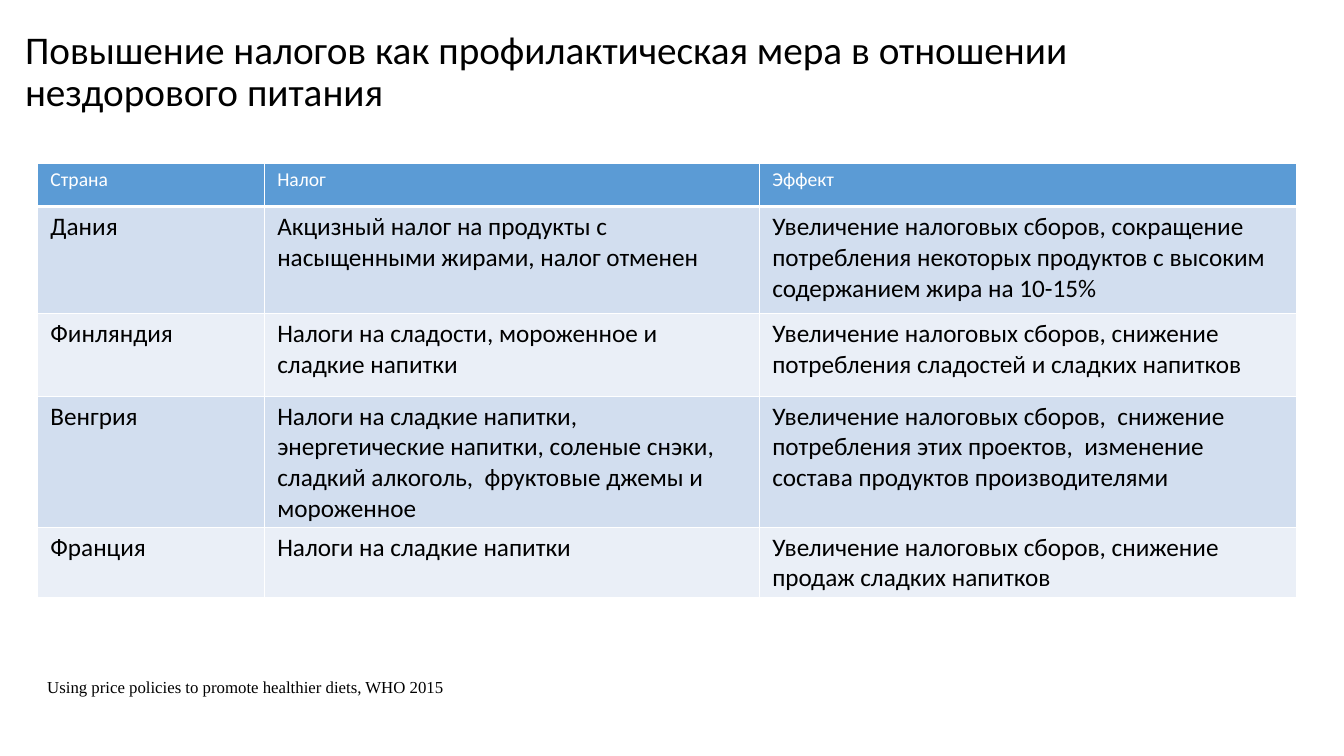
"""Build a slide on food taxes as a preventive measure, with a table by country."""
from lxml import etree
from pptx import Presentation
from pptx.dml.color import RGBColor
from pptx.enum import text
from pptx.oxml import ns
from pptx.util import Inches, Pt

TITLE = "Повышение налогов как профилактическая мера в отношении нездорового питания"
SOURCE = "Using price policies to promote healthier diets, WHO 2015"
TAXES = [
    ("Страна", "Налог", "Эффект"),
    ("Дания", "Акцизный налог на продукты с насыщенными жирами, налог отменен",
     "Увеличение налоговых сборов, сокращение потребления некоторых продуктов "
     "с высоким содержанием жира на 10-15%"),
    ("Финляндия", "Налоги на сладости, мороженное и сладкие напитки",
     "Увеличение налоговых сборов, снижение потребления сладостей и сладких напитков"),
    ("Венгрия",
     "Налоги на сладкие напитки, энергетические напитки, соленые снэки, "
     "сладкий алкоголь,  фруктовые джемы и мороженное",
     "Увеличение налоговых сборов,  снижение потребления этих проектов,  "
     "изменение состава продуктов производителями"),
    ("Франция", "Налоги на сладкие напитки",
     "Увеличение налоговых сборов, снижение продаж сладких напитков"),
]
COLUMN_WIDTHS = (2.25, 4.91, 5.33)
ROW_HEIGHTS = (0.43, 1.06, 0.82, 1.06, 0.58)

BLACK = RGBColor(0, 0, 0)
WHITE = RGBColor(0xFF, 0xFF, 0xFF)
HEADER_BLUE = RGBColor(0x5B, 0x9B, 0xD5)
BANDS = (RGBColor(0xD2, 0xDE, 0xEF), RGBColor(0xEA, 0xEF, 0xF7))


def style(paragraph, size, color, font="Calibri"):
    for run in paragraph.runs:
        run.font.name = font
        run.font.size = Pt(size)
        run.font.bold = False
        run.font.color.rgb = color


def add_label(slide, box, wording, size, font, wrap, anchor):
    frame = slide.shapes.add_textbox(*map(Inches, box)).text_frame
    frame.word_wrap = wrap
    frame.vertical_anchor = anchor
    frame.text = wording
    style(frame.paragraphs[0], size, BLACK, font)
    return frame


def add_borders(cell, bottom):
    properties = cell._tc.get_or_add_tcPr()
    for side, width in (("L", 1), ("R", 1), ("T", 1), ("B", bottom)):
        line = etree.SubElement(properties, ns.qn(f"a:ln{side}"), w=str(Pt(width)))
        fill = etree.SubElement(line, ns.qn("a:solidFill"))
        etree.SubElement(fill, ns.qn("a:srgbClr"), val=str(WHITE))


def add_tax_table(slide):
    table = slide.shapes.add_table(
        len(TAXES), len(COLUMN_WIDTHS), Inches(0.37), Inches(1.62),
        Inches(sum(COLUMN_WIDTHS)), Inches(sum(ROW_HEIGHTS))).table
    for column, width in zip(table.columns, COLUMN_WIDTHS):
        column.width = Inches(width)
    for r, (entries, height) in enumerate(zip(TAXES, ROW_HEIGHTS)):
        table.rows[r].height = Inches(height)
        header = r == 0
        for c, wording in enumerate(entries):
            cell = table.cell(r, c)
            cell.text = wording
            cell.margin_left = cell.margin_right = Inches(0.13)
            cell.margin_top = cell.margin_bottom = Inches(0.05)
            add_borders(cell, 3 if header else 1)
            cell.fill.solid()
            cell.fill.fore_color.rgb = HEADER_BLUE if header else BANDS[(r - 1) % 2]
            style(cell.text_frame.paragraphs[0], 14 if header else 18,
                  WHITE if header else BLACK)


def main():
    deck = Presentation()
    deck.slide_width, deck.slide_height = Inches(13.33), Inches(7.5)
    slide = deck.slides.add_slide(deck.slide_layouts[6])
    title = add_label(slide, (0.15, 0, 12.51, 1.45), TITLE, 28, "Calibri",
                      True, text.MSO_ANCHOR.MIDDLE)
    title.paragraphs[0].line_spacing = 0.9
    add_tax_table(slide)
    source = add_label(slide, (0.37, 6.66, 4.19, 0.3), SOURCE, 12, "Times New Roman",
                       False, text.MSO_ANCHOR.TOP)
    source.auto_size = text.MSO_AUTO_SIZE.SHAPE_TO_FIT_TEXT
    deck.save("out.pptx")


if __name__ == "__main__":
    main()
